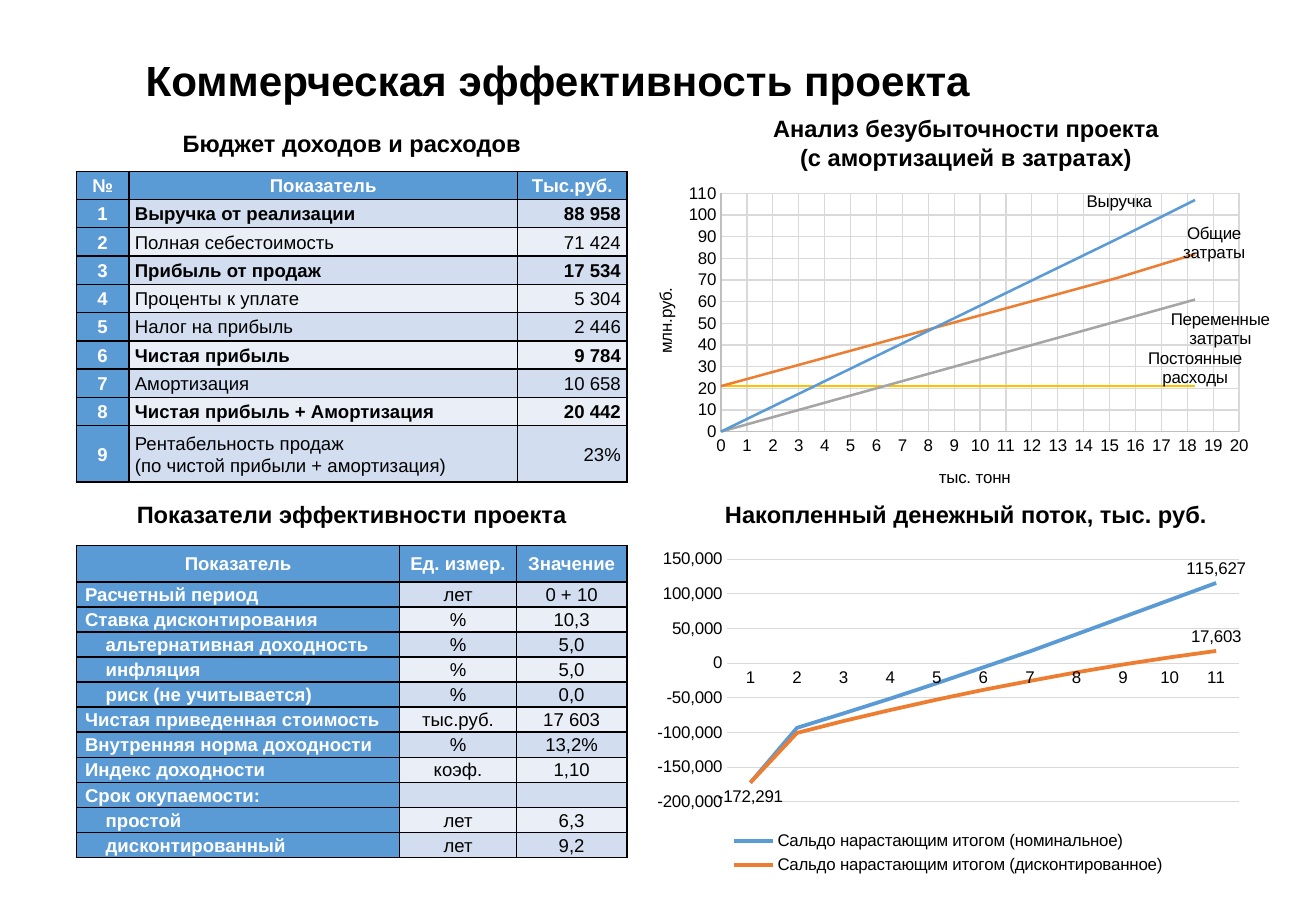
from dataclasses import dataclass
from typing import Optional

from pptx import Presentation
from pptx.chart.axis import CategoryAxis, ValueAxis
from pptx.chart.chart import Chart
from pptx.chart.data import CategoryChartData, XyChartData
from pptx.dml.color import RGBColor
from pptx.enum.chart import XL_CHART_TYPE, XL_LABEL_POSITION, XL_LEGEND_POSITION, XL_TICK_MARK
from pptx.enum.text import MSO_ANCHOR, PP_ALIGN
from pptx.oxml import parse_xml
from pptx.oxml.ns import nsdecls, qn
from pptx.oxml.xmlchemy import BaseOxmlElement
from pptx.slide import Slide
from pptx.table import _Cell as Cell
from pptx.text.text import Font
from pptx.util import Inches, Pt


@dataclass(frozen=True)
class Theme:
    font: str = "Arial"
    black: str = "000000"
    white: str = "FFFFFF"
    blue: str = "5B9BD5"
    orange: str = "ED7D31"
    gray: str = "A5A5A5"
    yellow: str = "FFC000"
    bands: tuple[str, str] = ("D2DEEF", "EAEFF7")
    grid: str = "D9D9D9"
    axis: str = "BFBFBF"
    title_size: float = 25
    heading_size: float = 14
    table_size: float = 11
    chart_size: float = 10


@dataclass(frozen=True)
class Frame:
    left: float
    top: float
    width: float
    height: float

    def lengths(self) -> tuple[int, int, int, int]:
        return Inches(self.left), Inches(self.top), Inches(self.width), Inches(self.height)


@dataclass(frozen=True)
class Row:
    texts: tuple[str, ...]
    bold: bool = False
    indent: float = 0


@dataclass(frozen=True)
class Grid:
    frame: Frame
    columns: tuple[float, ...]
    heights: tuple[float, ...]
    alignments: tuple[PP_ALIGN, ...]
    inset: float
    rows: tuple[Row, ...]


@dataclass(frozen=True)
class CostLine:
    name: str
    values: tuple[int, ...]
    color: str
    position: XL_LABEL_POSITION
    offset: tuple[float, float]


@dataclass(frozen=True)
class CashFlow:
    name: str
    values: tuple[int, ...]
    color: str
    labels: dict[int, XL_LABEL_POSITION]


THEME = Theme()
LEFT, CENTER, RIGHT = PP_ALIGN.LEFT, PP_ALIGN.CENTER, PP_ALIGN.RIGHT
ABOVE, BELOW = XL_LABEL_POSITION.ABOVE, XL_LABEL_POSITION.BELOW
STEP = 0.17

HEADINGS = (
    (Frame(0.63, 1.01, 4.53, 0.34), "Бюджет доходов и расходов"),
    (Frame(5.59, 0.89, 4.72, 0.57), "Анализ безубыточности проекта\n(с амортизацией в затратах)"),
    (Frame(0.63, 4.07, 4.53, 0.34), "Показатели эффективности проекта"),
    (Frame(5.59, 4.07, 4.72, 0.34), "Накопленный денежный поток, тыс. руб."),
)
BUDGET = Grid(
    Frame(0.63, 1.41, 4.53, 2.56), (0.43, 3.2, 0.9), (2.56 / 11,) * 9 + (2.56 / 11 * 2,),
    (CENTER, LEFT, RIGHT), 0.05,
    (
        Row(("№", "Показатель", "Тыс.руб.")),
        Row(("1", "Выручка от реализации", "88 958"), bold=True),
        Row(("2", "Полная себестоимость", "71 424")),
        Row(("3", "Прибыль от продаж", "17 534"), bold=True),
        Row(("4", "Проценты к уплате", "5 304")),
        Row(("5", "Налог на прибыль", "2 446")),
        Row(("6", "Чистая прибыль", "9 784"), bold=True),
        Row(("7", "Амортизация", "10 658")),
        Row(("8", "Чистая прибыль + Амортизация", "20 442"), bold=True),
        Row(("9", "Рентабельность продаж\n(по чистой прибыли + амортизация)", "23%")),
    ),
)
EFFICIENCY = Grid(
    Frame(0.63, 4.49, 4.53, 2.57), (2.66, 0.96, 0.91), (0.3,) + (2.27 / 11,) * 11,
    (LEFT, CENTER, CENTER), 0.07,
    (
        Row(("Показатель", "Ед. измер.", "Значение")),
        Row(("Расчетный период", "лет", "0 + 10")),
        Row(("Ставка дисконтирования", "%", "10,3")),
        Row(("альтернативная доходность", "%", "5,0"), indent=STEP),
        Row(("инфляция", "%", "5,0"), indent=STEP),
        Row(("риск (не учитывается)", "%", "0,0"), indent=STEP),
        Row(("Чистая приведенная стоимость", "тыс.руб.", "17 603")),
        Row(("Внутренняя норма доходности", "%", "13,2%")),
        Row(("Индекс доходности", "коэф.", "1,10")),
        Row(("Срок окупаемости:", "", "")),
        Row(("простой", "лет", "6,3"), indent=STEP),
        Row(("дисконтированный", "лет", "9,2"), indent=STEP),
    ),
)
TONNAGE = (0, 15.3, 18.3)
COST_LINES = (
    CostLine("Выручка", (0, 89, 107), THEME.blue, ABOVE, (-0.12, 0.05)),
    CostLine("Общие затраты", (21, 71, 82), THEME.orange, ABOVE, (0.03, 0.04)),
    CostLine("Переменные затраты", (0, 51, 61), THEME.gray, BELOW, (0.04, 0.02)),
    CostLine("Постоянные расходы", (21, 21, 21), THEME.yellow, ABOVE, (0, 0.02)),
)
CASH_FLOWS = (
    CashFlow("Сальдо нарастающим итогом (номинальное)",
             (-172291, -93299, -72407, -51125, -29003, -6042, 16913, 41591, 66270, 90948, 115627),
             THEME.blue, {10: ABOVE}),
    CashFlow("Сальдо нарастающим итогом (дисконтированное)",
             (-172291, -100642, -83455, -67574, -52601, -38505, -25723, -13258, -1953, 8301, 17603),
             THEME.orange, {0: BELOW, 10: ABOVE}),
)


def style_font(font: Font, size: float, color: str = THEME.black, bold: bool = False) -> None:
    font.name, font.size, font.bold = THEME.font, Pt(size), bold
    font.color.rgb = RGBColor.from_string(color)


def add_text(page: Slide, frame: Frame, text: str, size: float, align: PP_ALIGN,
             anchor: MSO_ANCHOR = MSO_ANCHOR.TOP, spacing: float = 1) -> None:
    text_frame = page.shapes.add_textbox(*frame.lengths()).text_frame
    text_frame.word_wrap, text_frame.vertical_anchor = True, anchor
    text_frame.text = text
    for para in text_frame.paragraphs:
        para.alignment, para.line_spacing = align, spacing
        style_font(para.runs[0].font, size, bold=True)


def add_borders(cell: Cell) -> None:
    properties = cell._tc.get_or_add_tcPr()
    for index, side in enumerate("LRTB"):
        properties.insert(index, parse_xml(
            f'<a:ln{side} {nsdecls("a")} w="12700"><a:solidFill>'
            f'<a:srgbClr val="{THEME.black}"/></a:solidFill></a:ln{side}>'))


def fill_cell(cell: Cell, text: str, align: PP_ALIGN, inset: float, indent: float,
              fill: str, color: str, bold: bool) -> None:
    add_borders(cell)
    cell.fill.solid()
    cell.fill.fore_color.rgb = RGBColor.from_string(fill)
    cell.vertical_anchor = MSO_ANCHOR.MIDDLE
    cell.margin_left, cell.margin_right = Inches(inset + indent), Inches(inset)
    cell.margin_top = cell.margin_bottom = 0
    cell.text_frame.text = text
    for para in cell.text_frame.paragraphs:
        para.alignment, para.line_spacing = align, 1.07
        for span in para.runs:
            style_font(span.font, THEME.table_size, color, bold)
        if not para.runs:
            para._p.get_or_add_endParaRPr().set("sz", str(int(THEME.table_size * 100)))


def add_grid(page: Slide, grid: Grid) -> None:
    shape = page.shapes.add_table(len(grid.rows), len(grid.columns), *grid.frame.lengths())
    table = shape.table
    for column, width in zip(table.columns, grid.columns):
        column.width = Inches(width)
    for index, (row, height) in enumerate(zip(grid.rows, grid.heights)):
        table.rows[index].height = Inches(height)
        for number, text in enumerate(row.texts):
            header = index == 0 or number == 0
            fill_cell(table.cell(index, number), text,
                      CENTER if index == 0 else grid.alignments[number],
                      grid.inset, row.indent if number == 0 else 0,
                      THEME.blue if header else THEME.bands[(index - 1) % 2],
                      THEME.white if header else THEME.black, header or row.bold)


def set_layout(parent: BaseOxmlElement, index: int, settings: dict[str, object]) -> None:
    for old in parent.findall(qn("c:layout")):
        parent.remove(old)
    items = "".join(f'<c:{key} val="{value}"/>' for key, value in settings.items())
    parent.insert(index, parse_xml(
        f'<c:layout {nsdecls("c")}><c:manualLayout>{items}</c:manualLayout></c:layout>'))


def style_axis(axis: CategoryAxis | ValueAxis, line: Optional[str], gridlines: bool) -> None:
    axis.major_tick_mark = axis.minor_tick_mark = XL_TICK_MARK.NONE
    style_font(axis.tick_labels.font, THEME.chart_size)
    axis.has_major_gridlines = gridlines
    if gridlines:
        axis.major_gridlines.format.line.color.rgb = RGBColor.from_string(THEME.grid)
        axis.major_gridlines.format.line.width = Pt(0.75)
    if line:
        axis.format.line.color.rgb = RGBColor.from_string(line)
        axis.format.line.width = Pt(0.75)
    else:
        axis.format.line.fill.background()


def style_lines(chart: Chart, colors: list[str], width: float) -> None:
    chart.has_title = False
    style_font(chart.font, THEME.chart_size)
    for series, color in zip(chart.plots[0].series, colors):
        series.smooth = False
        series.format.line.color.rgb = RGBColor.from_string(color)
        series.format.line.width = Pt(width)


def hide_other_labels(chart: Chart) -> None:
    for flag in chart.element.xpath(".//c:dLbls/c:showVal | .//c:dLbls/c:showLeaderLines"):
        flag.set("val", "0")


def add_break_even(page: Slide, frame: Frame) -> None:
    data = XyChartData()
    for cost in COST_LINES:
        series = data.add_series(cost.name)
        for tons, value in zip(TONNAGE, cost.values):
            series.add_data_point(tons, value)
    chart = page.shapes.add_chart(
        XL_CHART_TYPE.XY_SCATTER_LINES_NO_MARKERS, *frame.lengths(), data).chart
    style_lines(chart, [cost.color for cost in COST_LINES], 1.5)
    chart.has_legend = False
    axes = ((chart.category_axis, "тыс. тонн", 20, 1), (chart.value_axis, "млн.руб.", 110, 10))
    for axis, title, maximum, unit in axes:
        style_axis(axis, THEME.axis, True)
        axis.minimum_scale, axis.maximum_scale, axis.major_unit = 0, maximum, unit
        axis.axis_title.text_frame.text = title
        style_font(axis.axis_title.text_frame.paragraphs[0].runs[0].font, THEME.chart_size)
    for series, cost in zip(chart.plots[0].series, COST_LINES):
        series.points[len(TONNAGE) - 1].data_label.position = cost.position
    hide_other_labels(chart)
    for label, cost in zip(chart.element.xpath(".//c:dLbl"), COST_LINES):
        label.find(qn("c:showVal")).set("val", "0")
        label.find(qn("c:showSerName")).set("val", "1")
        set_layout(label, 1, dict(zip("xy", cost.offset)))
    for title, spot in zip(chart.element.xpath(".//c:title"), ((0.46, 0.9), (0.01, 0.33))):
        set_layout(title, 1, {"xMode": "edge", "yMode": "edge", "x": spot[0], "y": spot[1]})
    set_layout(chart.element.xpath(".//c:plotArea")[0], 0, {
        "layoutTarget": "inner", "xMode": "edge", "yMode": "edge",
        "x": 0.12, "y": 0.04, "w": 0.82, "h": 0.76})


def add_cash_flow(page: Slide, frame: Frame) -> None:
    data = CategoryChartData(number_format="#,##0")
    data.categories = [str(year) for year in range(1, 12)]
    for flow in CASH_FLOWS:
        data.add_series(flow.name, flow.values)
    chart = page.shapes.add_chart(XL_CHART_TYPE.LINE, *frame.lengths(), data).chart
    style_lines(chart, [flow.color for flow in CASH_FLOWS], 2.25)
    chart.plots[0].vary_by_categories = False
    style_axis(chart.category_axis, THEME.grid, False)
    style_axis(chart.value_axis, None, True)
    chart.has_legend = True
    chart.legend.position = XL_LEGEND_POSITION.BOTTOM
    chart.legend.include_in_layout = False
    style_font(chart.legend.font, THEME.chart_size)
    for series, flow in zip(chart.plots[0].series, CASH_FLOWS):
        for index, position in flow.labels.items():
            series.points[index].data_label.position = position
    hide_other_labels(chart)


def main() -> None:
    deck = Presentation()
    deck.slide_width, deck.slide_height = Inches(10.83), Inches(7.5)
    page = deck.slides.add_slide(deck.slide_layouts[6])
    add_text(page, Frame(1.1, 0.31, 8.62, 0.75), "Коммерческая эффективность проекта",
             THEME.title_size, LEFT, MSO_ANCHOR.MIDDLE, 0.9)
    add_cash_flow(page, Frame(5.31, 4.47, 4.99, 2.77))
    add_break_even(page, Frame(5.31, 1.49, 5.2, 2.58))
    for grid in (EFFICIENCY, BUDGET):
        add_grid(page, grid)
    for frame, text in HEADINGS:
        add_text(page, frame, text, THEME.heading_size, CENTER)
    deck.save("out.pptx")


if __name__ == "__main__":
    main()
